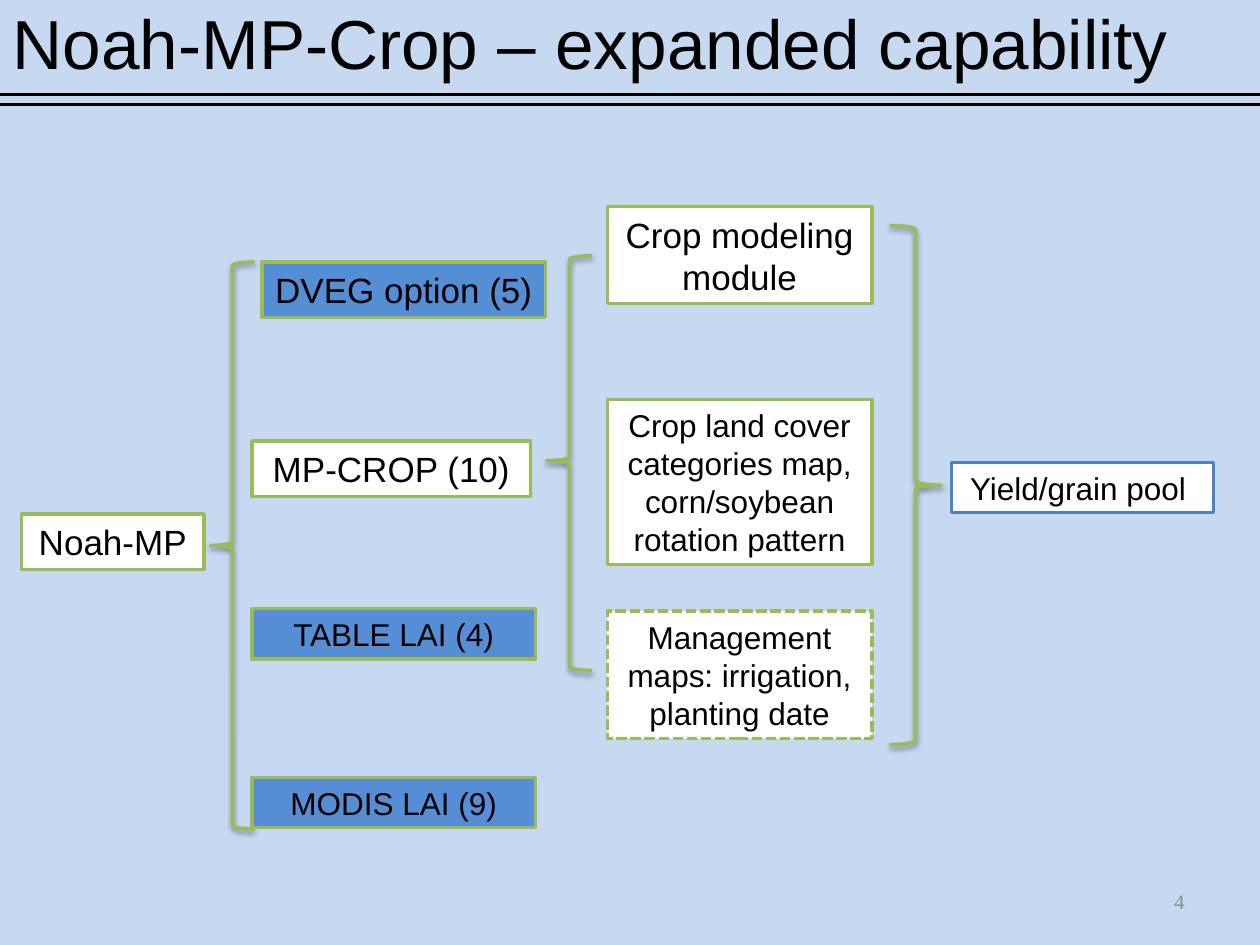
from dataclasses import dataclass

import lxml.etree
import pptx
import pptx.dml.color
import pptx.enum.dml
import pptx.enum.shapes
import pptx.enum.text
import pptx.oxml.ns
import pptx.util

Inches, Pt = pptx.util.Inches, pptx.util.Pt
SHAPE = pptx.enum.shapes.MSO_SHAPE
ALIGN = pptx.enum.text.PP_ALIGN
MIDDLE = pptx.enum.text.MSO_ANCHOR.MIDDLE

BLACK, WHITE, GRAY = "000000", "FFFFFF", "8C8C8C"
GREEN, BLUE, EDGE_BLUE = "9BBB59", "558ED5", "4F81BD"


@dataclass
class Step:
    text: str
    left: float
    top: float
    width: float
    height: float
    size: int = 18
    fill: str = WHITE
    edge: str = GREEN
    dashed: bool = False


@dataclass
class Brace:
    kind: int
    left: float
    top: float
    width: float
    height: float
    middle: float = 0.5


BRACES = [
    Brace(SHAPE.LEFT_BRACE, 1.67, 2.08, 0.35, 4.5),
    Brace(SHAPE.LEFT_BRACE, 4.34, 2.03, 0.36, 3.29, 0.494),
    Brace(SHAPE.RIGHT_BRACE, 7.06, 1.79, 0.41, 4.12),
]

STEPS = [
    # Base model
    Step("Noah-MP", 0.17, 4.08, 1.45, 0.44, 20),
    # Vegetation options
    Step("DVEG option (5)", 2.08, 2.08, 2.25, 0.44, 20, BLUE),
    Step("MP-CROP (10)", 2, 3.5, 2.21, 0.44, 20),
    Step("TABLE LAI (4)", 2, 4.83, 2.25, 0.4, fill=BLUE),
    Step("MODIS LAI (9)", 2, 6.17, 2.25, 0.4, fill=BLUE),
    # Crop components
    Step("Crop modeling module", 4.82, 1.64, 2.1, 0.77, 20),
    Step("Crop land cover categories map, corn/soybean rotation pattern",
         4.82, 3.17, 2.1, 1.31),
    Step("Management maps: irrigation, planting date",
         4.82, 4.85, 2.1, 1.01, dashed=True),
    # Result
    Step("Yield/grain pool ", 7.55, 3.67, 2.08, 0.4, edge=EDGE_BLUE),
]


def rgb(value: str) -> pptx.dml.color.RGBColor:
    return pptx.dml.color.RGBColor.from_string(value)


def write(shape, text: str, size: float, align: int, color: str = BLACK,
          name: str = "Arial") -> None:
    frame = shape.text_frame
    frame.text = text
    frame.word_wrap = True
    frame.vertical_anchor = MIDDLE
    para = frame.paragraphs[0]
    para.alignment = align
    font = para.runs[0].font
    font.size, font.name = Pt(size), name
    font.color.rgb = rgb(color)


def set_line(line, color: str) -> None:
    line.color.rgb = rgb(color)
    line.width = Pt(2)


def add_part(page, kind: int, part):
    shape = page.shapes.add_shape(kind, Inches(part.left), Inches(part.top),
                                  Inches(part.width), Inches(part.height))
    shape.shadow.inherit = False
    return shape


def add_step(page, step: Step) -> None:
    box = add_part(page, SHAPE.RECTANGLE, step)
    box.fill.solid()
    box.fill.fore_color.rgb = rgb(step.fill)
    set_line(box.line, step.edge)
    if step.dashed:
        box.line.dash_style = pptx.enum.dml.MSO_LINE.SQUARE_DOT
    write(box, step.text, step.size, ALIGN.CENTER)
    box.text_frame.auto_size = pptx.enum.text.MSO_AUTO_SIZE.SHAPE_TO_FIT_TEXT


def add_brace(page, brace: Brace) -> None:
    shape = add_part(page, brace.kind, brace)
    shape.adjustments[0] = 0.083
    shape.adjustments[1] = brace.middle
    shape.fill.background()
    set_line(shape.line, GREEN)
    # Soft shadow straight below
    qn = pptx.oxml.ns.qn
    effects = shape._element.spPr.find(qn("a:effectLst"))
    shadow = lxml.etree.SubElement(
        effects, qn("a:outerShdw"), blurRad=str(Pt(3.1)), dist=str(Pt(1.6)),
        dir="5400000", rotWithShape="0")
    color = lxml.etree.SubElement(shadow, qn("a:srgbClr"), val=BLACK)
    lxml.etree.SubElement(color, qn("a:alpha"), val="38000")


def add_rule(page, top: float) -> None:
    rule = page.shapes.add_connector(
        pptx.enum.shapes.MSO_CONNECTOR.STRAIGHT,
        Inches(0), Inches(top), Inches(10), Inches(top))
    set_line(rule.line, BLACK)
    lxml.etree.SubElement(rule._element.spPr, pptx.oxml.ns.qn("a:effectLst"))


def main() -> None:
    deck = pptx.Presentation()
    deck.slide_width, deck.slide_height = Inches(10), Inches(7.5)
    page = deck.slides.add_slide(deck.slide_layouts[5])
    page.background.fill.solid()
    page.background.fill.fore_color.rgb = rgb("C6D9F1")

    # Title and double rule
    title = page.shapes.title
    title.left, title.top = Inches(0), Inches(0)
    title.width, title.height = Inches(9.83), Inches(0.67)
    write(title, "Noah-MP-Crop – expanded capability", 39.6, ALIGN.LEFT)
    title.text_frame.auto_size = pptx.enum.text.MSO_AUTO_SIZE.NONE
    for top in (0.75, 0.83):
        add_rule(page, top)

    # Diagram
    for brace in BRACES:
        add_brace(page, brace)
    for step in STEPS:
        add_step(page, step)

    # Page number
    number = page.shapes.add_textbox(Inches(7.17), Inches(6.95),
                                     Inches(2.33), Inches(0.4))
    write(number, "4", 12, ALIGN.RIGHT, GRAY, "Times New Roman")

    deck.save("out.pptx")


if __name__ == "__main__":
    main()
